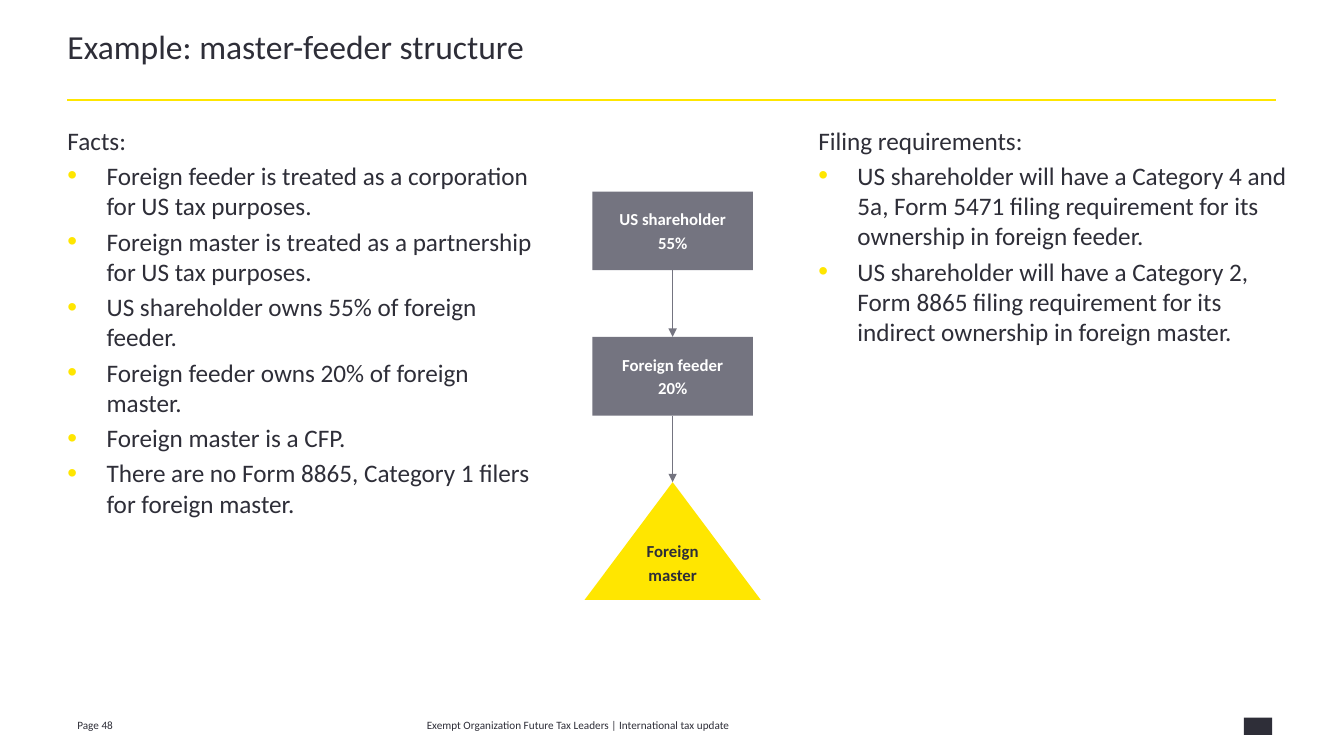
from dataclasses import dataclass

from pptx import Presentation
from pptx import util as u
from pptx.dml.color import RGBColor
from pptx.enum import shapes, text
from pptx.oxml import xmlchemy as xml
from pptx.oxml.ns import qn

Pt = u.Pt
YELLOW = RGBColor(0xFF, 0xE6, 0x00)
DARK = RGBColor(0x2E, 0x2E, 0x38)
GREY = RGBColor(0x74, 0x74, 0x80)
WHITE = RGBColor(0xFF, 0xFF, 0xFF)
FONT = "Calibri"
INDENT = 28
LEFT = 48.2
AXIS = 480.7  # vertical centre line of the diagram


@dataclass
class Column:
    left: float
    width: float
    height: float
    heading: str
    items: list[str]


@dataclass
class Node:
    kind: shapes.MSO_SHAPE
    top: float
    width: float
    height: float
    lines: list[str]
    fill: RGBColor
    colour: RGBColor
    margins: tuple[float, float, float, float]
    wrap: bool = True


@dataclass
class Footer:
    left: float
    width: float
    words: str
    align: text.PP_ALIGN


BOX = shapes.MSO_SHAPE.RECTANGLE
BOX_MARGINS = (2.9, 3.6, 2.9, 3.6)

COLUMNS = [
    Column(LEFT, 334.8, 314, "Facts:", [
        "Foreign feeder is treated as a corporation for US tax purposes.",
        "Foreign master is treated as a partnership for US tax purposes.",
        "US shareholder owns 55% of foreign feeder.",
        "Foreign feeder owns 20% of foreign master.",
        "Foreign master is a CFP.",
        "There are no Form 8865, Category 1 filers for foreign master.",
    ]),
    Column(584.8, 347, 161.3, "Filing requirements:", [
        "US shareholder will have a Category 4 and 5a, Form 5471 filing "
        "requirement for its ownership in foreign feeder.",
        "US shareholder will have a Category 2, Form 8865 filing "
        "requirement for its indirect ownership in foreign master.",
    ]),
]

NODES = [
    Node(BOX, 136.8, 114.6, 56.2, ["US shareholder", "55%"], GREY, WHITE, BOX_MARGINS),
    Node(BOX, 240.6, 114.6, 56.2, ["Foreign feeder", "20%"], GREY, WHITE, BOX_MARGINS),
    Node(shapes.MSO_SHAPE.FLOWCHART_EXTRACT, 344.4, 126, 84.2, ["Foreign", "master"],
         YELLOW, DARK, (7.2, 0, 7.2, 10.8), wrap=False),
]

FOOTERS = [
    Footer(LEFT, 52.6, "Page 48", text.PP_ALIGN.LEFT),
    Footer(254.9, 316.8,
           "Exempt Organization Future Tax Leaders | International tax update",
           text.PP_ALIGN.CENTER),
]


def place(box, left: float, top: float, width: float, height: float) -> None:
    box.left, box.top, box.width, box.height = map(Pt, (left, top, width, height))


def set_margins(frame, left: float, top: float, right: float, bottom: float) -> None:
    frame.margin_left, frame.margin_top = Pt(left), Pt(top)
    frame.margin_right, frame.margin_bottom = Pt(right), Pt(bottom)


def style(frame, size: float, colour: RGBColor, align: text.PP_ALIGN,
          bold: bool = False) -> None:
    for index, para in enumerate(frame.paragraphs):
        para.alignment = align
        para.space_before = Pt(0.2 * size if index else 0)
        for span in para.runs:
            span.font.name, span.font.size = FONT, Pt(size)
            span.font.bold, span.font.color.rgb = bold, colour


def add_element(parent, tag: str, **attributes: str):
    element = xml.OxmlElement(tag)
    for key, value in attributes.items():
        element.set(key, value)
    parent.append(element)
    return element


def set_bullet(para, bulleted: bool) -> None:
    props = para._p.get_or_add_pPr()
    indent = Pt(INDENT) if bulleted else 0
    props.set("marL", str(indent))
    props.set("indent", str(-indent))
    if not bulleted:
        add_element(props, "a:buNone")
        return
    add_element(add_element(props, "a:buClr"), "a:srgbClr", val=str(YELLOW))
    add_element(props, "a:buSzPct", val="110000")
    add_element(props, "a:buFont", typeface="Arial")
    add_element(props, "a:buChar", char="•")


def fill_title(title) -> None:
    place(title, LEFT, 23, 864.7, 46.8)
    frame = title.text_frame
    frame.text = "Example: master-feeder structure"
    frame.vertical_anchor = text.MSO_ANCHOR.TOP
    frame.auto_size = text.MSO_AUTO_SIZE.NONE
    set_margins(frame, 0, 0, 0, 0)
    frame.paragraphs[0].line_spacing = 0.85
    style(frame, 24, DARK, text.PP_ALIGN.LEFT)


def fill_column(body, column: Column) -> None:
    place(body, column.left, 89.3, column.width, column.height)
    frame = body.text_frame
    frame.text = "\n".join([column.heading, *column.items])
    frame.auto_size = text.MSO_AUTO_SIZE.NONE
    set_margins(frame, 0, 0, 0, 0)
    for index, para in enumerate(frame.paragraphs):
        set_bullet(para, index > 0)
    style(frame, 18, DARK, text.PP_ALIGN.LEFT)


def add_plain(page, kind: shapes.MSO_SHAPE, fill: RGBColor):
    shape = page.shapes.add_shape(kind, 0, 0, 0, 0)
    shape.shadow.inherit = False
    shape.fill.solid()
    shape.fill.fore_color.rgb = fill
    shape.line.fill.background()
    return shape


def add_node(page, node: Node) -> None:
    shape = add_plain(page, node.kind, node.fill)
    place(shape, AXIS - node.width / 2, node.top, node.width, node.height)
    frame = shape.text_frame
    frame.text = "\n".join(node.lines)
    frame.word_wrap = node.wrap
    frame.vertical_anchor = text.MSO_ANCHOR.MIDDLE
    set_margins(frame, *node.margins)
    style(frame, 12, node.colour, text.PP_ALIGN.CENTER, bold=True)


def add_line(page, start: tuple[float, float], end: tuple[float, float],
             colour: RGBColor, width: float, arrow: bool = False) -> None:
    line = page.shapes.add_connector(
        shapes.MSO_CONNECTOR.STRAIGHT, *map(Pt, (*start, *end)))
    line.line.color.rgb, line.line.width = colour, Pt(width)
    props = line._element.spPr
    if arrow:
        add_element(props.find(qn("a:ln")), "a:tailEnd", type="triangle")
    add_element(props, "a:effectLst")


def add_footer(page, footer: Footer) -> None:
    box = page.shapes.add_textbox(0, 0, 0, 0)
    place(box, footer.left, 509.8, footer.width, 14.4)
    box.text_frame.text = footer.words
    box.text_frame.word_wrap = True
    style(box.text_frame, 8, DARK, footer.align)


def main() -> None:
    deck = Presentation()
    deck.slide_width, deck.slide_height = Pt(960.48), Pt(540)
    page = deck.slides.add_slide(deck.slide_layouts.get_by_name("Two Content"))

    # Title and rule
    fill_title(page.shapes.title)
    add_line(page, (LEFT, 71.3), (912.2, 71.3), YELLOW, 1.5)

    # Text columns
    for index, column in enumerate(COLUMNS, start=1):
        fill_column(page.placeholders[index], column)

    # Ownership diagram
    for node in NODES:
        add_node(page, node)
    for upper, lower in zip(NODES, NODES[1:]):
        add_line(page, (AXIS, upper.top + upper.height), (AXIS, lower.top),
                 GREY, 0.5, arrow=True)

    # Footer with a plain corner mark
    for footer in FOOTERS:
        add_footer(page, footer)
    place(add_plain(page, BOX, DARK), 889, 512.6, 20.2, 12.3)

    deck.save("out.pptx")


if __name__ == "__main__":
    main()
